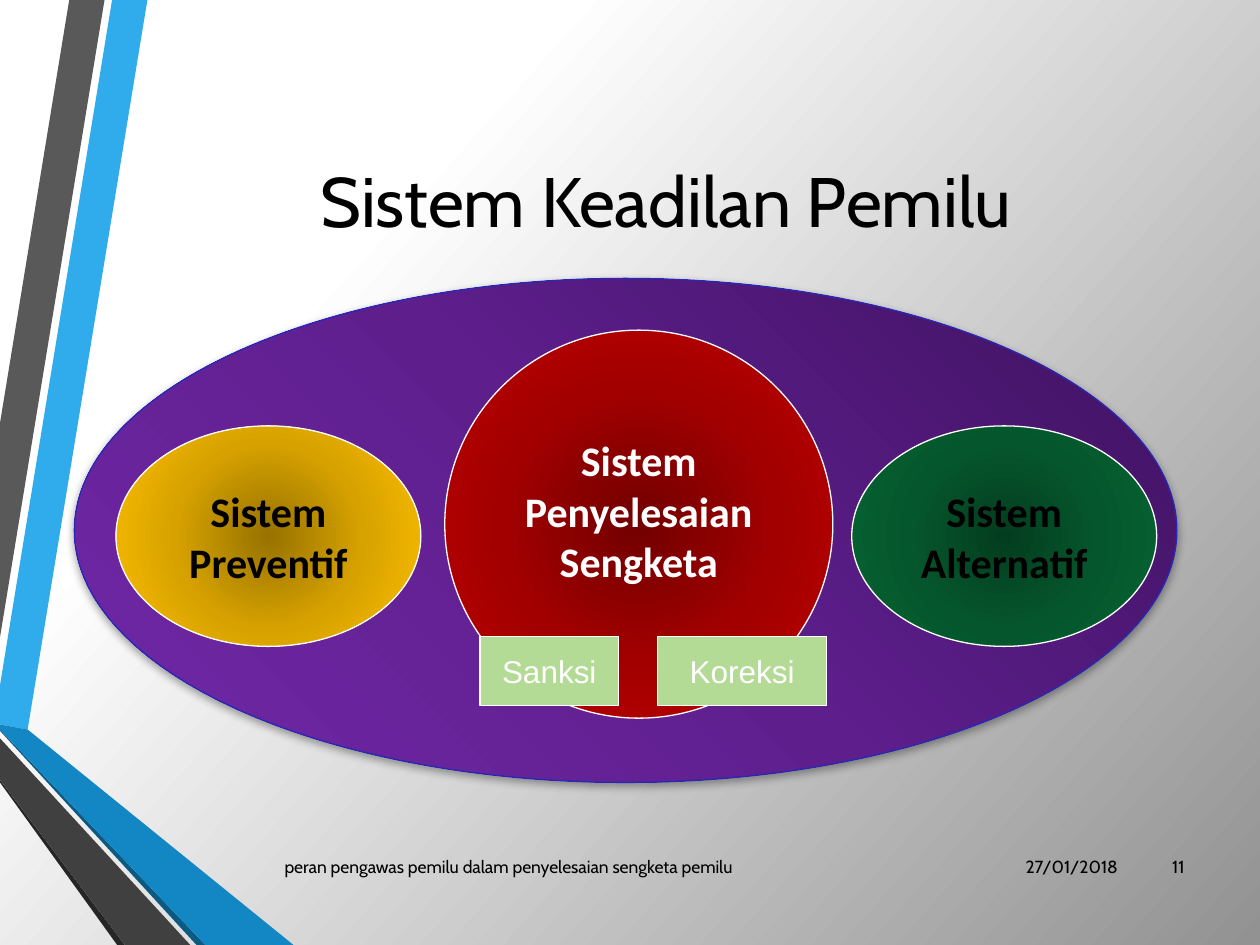
from lxml.etree import SubElement
from pptx import Presentation
from pptx.dml.color import RGBColor
from pptx.enum.shapes import MSO_SHAPE as Shape
from pptx.enum.text import MSO_ANCHOR as Anchor, PP_ALIGN as Align
from pptx.oxml.ns import qn
from pptx.util import Inches, Pt

BLACK = RGBColor(0x00, 0x00, 0x00)
WHITE = RGBColor(0xFF, 0xFF, 0xFF)
INDIGO = RGBColor(0x28, 0x28, 0xB8)
LIGHT_GREEN = RGBColor(0xB3, 0xDB, 0x95)
SKY = RGBColor(0x30, 0xAC, 0xEC)
BLUE = RGBColor(0x12, 0x87, 0xC3)
DEEP_BLUE = RGBColor(0x0C, 0x5A, 0x82)
GREY = RGBColor(0x59, 0x59, 0x59)
DARK_GREY = RGBColor(0x40, 0x40, 0x40)
CHARCOAL = RGBColor(0x26, 0x26, 0x26)

# Gradient stops: position in percent, colour


def three_stops(*colours):
    return list(zip((0, 50, 100), (RGBColor.from_string(c) for c in colours)))


BACKDROP = [(0, WHITE), (27, WHITE), (100, RGBColor(0x92, 0x92, 0x92))]
PURPLES = three_stops("3F1260", "5E1F8D", "7128A8")
GOLDS = three_stops("977200", "D7A200", "FFC000")
REDS = three_stops("720000", "A20000", "C00000")
GREENS = three_stops("033D1F", "05562C", "066634")

# Content
TITLE = "Sistem Keadilan Pemilu"
FOOTERS = [  # text, left, width, alignment
    ("27/01/2018", 8.03, 0.94, Align.RIGHT),
    ("peran pengawas pemilu dalam penyelesaian sengketa pemilu", 2.16, 5.81, Align.LEFT),
    ("11", 9.03, 0.47, Align.RIGHT),
]
SYSTEMS = [  # lines, box, gradient, text colour, bottom inset
    (["Sistem Preventif"], (0.92, 3.38, 2.42, 1.75), GOLDS, BLACK, 0.05),
    (["Sistem", "Penyelesaian Sengketa"], (3.53, 2.62, 3.08, 3.08), REDS, WHITE, 0.27),
    (["Sistem", "Alternatif"], (6.76, 3.38, 2.42, 1.75), GREENS, BLACK, 0.05),
]
OUTCOMES = [("Sanksi", 3.81, 1.1), ("Koreksi", 5.22, 1.34)]  # text, left, width
RIBBONS = [
    (SKY, [(0, 5.44), (0, 5.75), (0.22, 5.79), (1.17, 0), (0.89, 0)]),
    (GREY, [(0.83, 0), (0.55, 0), (0, 3.36), (0, 5.06)]),
    (CHARCOAL, [(0, 6.19), (0, 6.21), (0.93, 7.5), (0.99, 7.5)]),
    (DEEP_BLUE, [(0, 5.79), (0, 5.8), (1.56, 7.5), (1.63, 7.5)]),
    (BLUE, [(0, 5.79), (1.63, 7.5), (2.33, 7.5), (0.22, 5.79), (0, 5.75)]),
    (DARK_GREY, [(0, 6.19), (0.99, 7.5), (1.51, 7.5), (0, 5.86)]),
]


def add_colour(parent, colour):
    return SubElement(parent, qn("a:srgbClr"), val=str(colour))


def set_gradient(fill, properties, stops, angle=None):
    """Linear gradient at a clockwise angle, or circular from the centre."""
    fill.solid()
    solid = properties.find(qn("a:solidFill"))
    gradient = solid.makeelement(qn("a:gradFill"), {"rotWithShape": "1"})
    properties.replace(solid, gradient)
    stop_list = SubElement(gradient, qn("a:gsLst"))
    for position, colour in stops:
        add_colour(SubElement(stop_list, qn("a:gs"), pos=str(position * 1000)), colour)
    if angle is None:
        route = SubElement(gradient, qn("a:path"), path="circle")
        SubElement(route, qn("a:fillToRect"), l="50000", t="50000", r="50000", b="50000")
    else:
        SubElement(gradient, qn("a:lin"), ang=str(angle * 60000), scaled="0")


def add_soft_shadow(shape):
    effects = shape._element.spPr.find(qn("a:effectLst"))
    shadow = SubElement(effects, qn("a:outerShdw"), blurRad=str(Pt(5)),
                        dist=str(Pt(1.8)), dir="5400000", rotWithShape="0")
    SubElement(add_colour(shadow, BLACK), qn("a:alpha"), val="35000")


def write(shape, lines, font, size, colour, align=Align.CENTER, bold=False):
    frame = shape.text_frame
    frame.word_wrap = True
    frame.vertical_anchor = Anchor.MIDDLE
    frame.text = "\n".join(lines)
    for para in frame.paragraphs:
        para.alignment = align
        para.font.name = font
        para.font.size = Pt(size)
        para.font.bold = bold
        para.font.color.rgb = colour


def add_outlined(page, kind, box, line_colour=WHITE):
    shape = page.shapes.add_shape(kind, *map(Inches, box))
    shape.shadow.inherit = False
    shape.line.color.rgb = line_colour
    shape.line.width = Pt(0.75)
    return shape


deck = Presentation()
deck.slide_width, deck.slide_height = Inches(10), Inches(7.5)
page = deck.slides.add_slide(deck.slide_layouts[5])

# Background
backdrop = page.background.fill
backdrop.solid()
set_gradient(backdrop, page._element.find(".//" + qn("p:bgPr")), BACKDROP, 42)

# Ribbons along the left edge
for colour, points in RIBBONS:
    start, *rest = [(Inches(x), Inches(y)) for x, y in points]
    builder = page.shapes.build_freeform(*start)
    builder.add_line_segments(rest, close=True)
    ribbon = builder.convert_to_shape()
    ribbon.shadow.inherit = False
    ribbon.fill.solid()
    ribbon.fill.fore_color.rgb = colour
    ribbon.line.fill.background()

# Title
title = page.shapes.title
title.left, title.top, title.width, title.height = map(Inches, (1.07, 0.5, 8.43, 2.17))
write(title, [TITLE], "Cabin", 40, BLACK)

# Footer row
for text, left, width, align in FOOTERS:
    footer = page.shapes.add_textbox(*map(Inches, (left, 6.68, width, 0.4)))
    write(footer, [text], "Cabin", 10, BLACK, align)

# Enclosing ellipse
whole = add_outlined(page, Shape.OVAL, (0.59, 2.21, 8.75, 4), INDIGO)
set_gradient(whole.fill, whole._element.spPr, PURPLES, 135)
add_soft_shadow(whole)

# Three systems
for lines, box, stops, colour, inset in SYSTEMS:
    system = add_outlined(page, Shape.OVAL, box)
    set_gradient(system.fill, system._element.spPr, stops)
    write(system, lines, "Calibri", 24, colour, bold=True)
    system.text_frame.margin_bottom = Inches(inset)

# Outcomes of dispute resolution
for text, left, width in OUTCOMES:
    outcome = add_outlined(page, Shape.RECTANGLE, (left, 5.05, width, 0.55))
    outcome.fill.solid()
    outcome.fill.fore_color.rgb = LIGHT_GREEN
    write(outcome, [text], "Arial", 18, WHITE)

deck.save("out.pptx")
